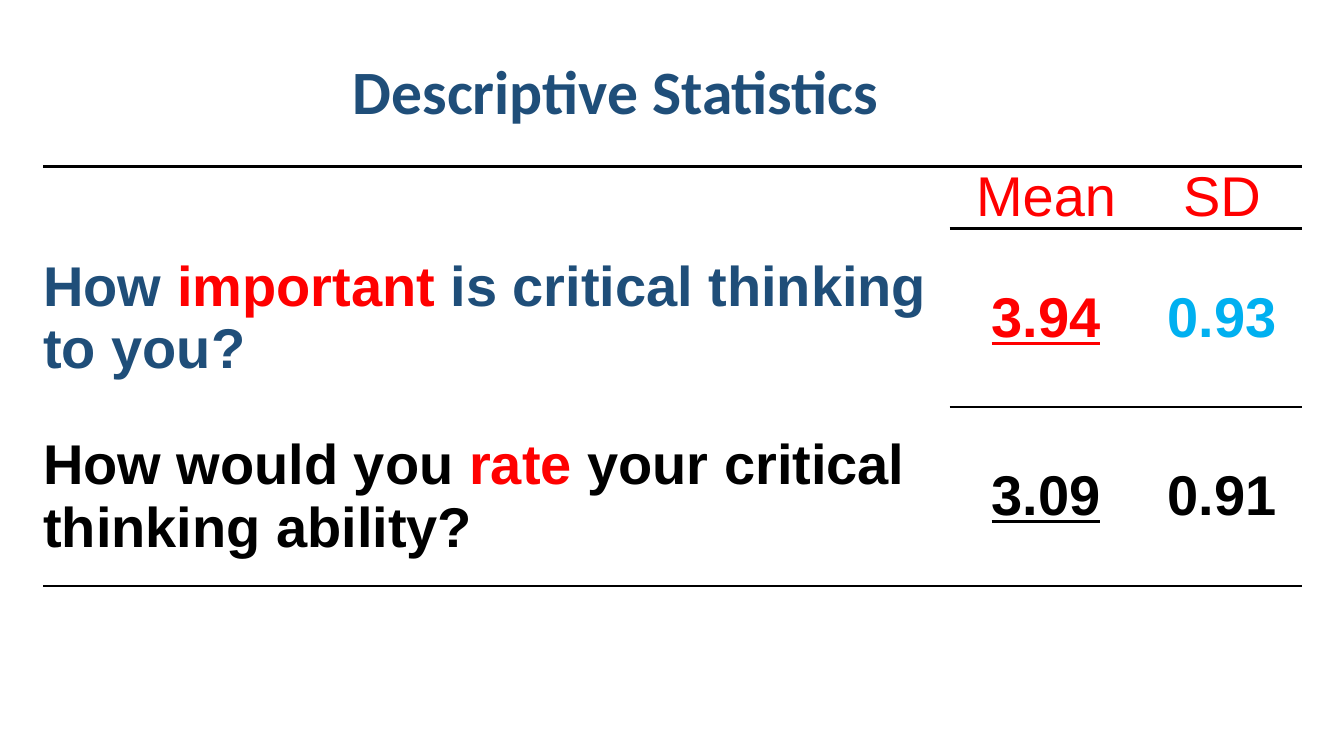
from lxml import etree
from pptx import Presentation
from pptx.dml.color import RGBColor
from pptx.enum.text import MSO_ANCHOR, PP_ALIGN
from pptx.oxml.ns import qn
from pptx.util import Inches, Pt

CENTER, LEFT = PP_ALIGN.CENTER, PP_ALIGN.LEFT
BOTTOM, MIDDLE = MSO_ANCHOR.BOTTOM, MSO_ANCHOR.MIDDLE
COLORS = {"navy": "1F4E79", "red": "FF0000", "sky": "00B0F0",
          "black": "000000", "white": "FFFFFF"}


def add_run(p, text, font, size, color, bold=True, underline=False):
    r = p.add_run()
    r.text = text
    r.font.name = font
    r.font.size = Pt(size)
    r.font.bold = bold
    r.font.underline = underline
    r.font.color.rgb = RGBColor.from_string(COLORS[color])


def set_border(cell, position, side, width):
    """Draw one cell edge in black, or hide it when width is 0."""
    ln = etree.Element(qn(f"a:ln{side}"), w=str(int(Pt(width))))
    if width:
        fill = etree.SubElement(ln, qn("a:solidFill"))
        etree.SubElement(fill, qn("a:srgbClr"), val=COLORS["black"])
    else:
        etree.SubElement(ln, qn("a:noFill"))
    cell._tc.get_or_add_tcPr().insert(position, ln)


prs = Presentation()
prs.slide_width, prs.slide_height = Inches(13.33), Inches(7.5)
s = prs.slides.add_slide(prs.slide_layouts[6])

# Table content: each cell is a list of (text, color, underline)
rows = [
    [[], [("Mean", "red", False)], [("SD", "red", False)]],
    [[("How ", "navy", False), ("important", "red", False),
      (" is critical thinking to you?", "navy", False)],
     [("3.94", "red", True)], [("0.93", "sky", False)]],
    [[("How would you ", "black", False), ("rate", "red", False),
      (" your critical thinking ability?", "black", False)],
     [("3.09", "black", True)], [("0.91", "black", False)]],
]
col_widths = [8.99, 1.91, 1.58]
row_heights = [0.62, 1.77, 1.77]
# Horizontal rule widths above each row, and below the last, by column
rules = [[2.25, 2.25, 2.25], [0, 2.25, 2.25], [0, 1.5, 1.5], [1.5, 1.5, 1.5]]

# Statistics table
table = s.shapes.add_table(3, 3, Inches(0.43), Inches(1.65),
                           Inches(sum(col_widths)), Inches(sum(row_heights))).table
table.horz_banding = False
table.first_row = False
for col, width in zip(table.columns, col_widths):
    col.width = Inches(width)
for row, height in zip(table.rows, row_heights):
    row.height = Inches(height)

for i, row in enumerate(rows):
    for j, parts in enumerate(row):
        cell = table.cell(i, j)
        cell.fill.solid()
        cell.fill.fore_color.rgb = RGBColor.from_string(COLORS["white"])
        cell.margin_left = cell.margin_right = 0
        cell.margin_top = cell.margin_bottom = 0
        cell.vertical_anchor = MIDDLE if i else BOTTOM
        p = cell.text_frame.paragraphs[0]
        p.alignment = CENTER if j else LEFT
        for text, color, underline in parts:
            add_run(p, text, "Arial", 40, color, bold=i > 0, underline=underline)
        edges = [("L", 0), ("R", 0), ("T", rules[i][j]), ("B", rules[i + 1][j])]
        for position, (side, width) in enumerate(edges):
            set_border(cell, position, side, width)

# Title
title = s.shapes.add_textbox(Inches(3.4), Inches(0.48), Inches(5.47), Inches(0.84))
title.text_frame.word_wrap = False
add_run(title.text_frame.paragraphs[0], "Descriptive Statistics", "Calibri", 44, "navy")

prs.save("out.pptx")
